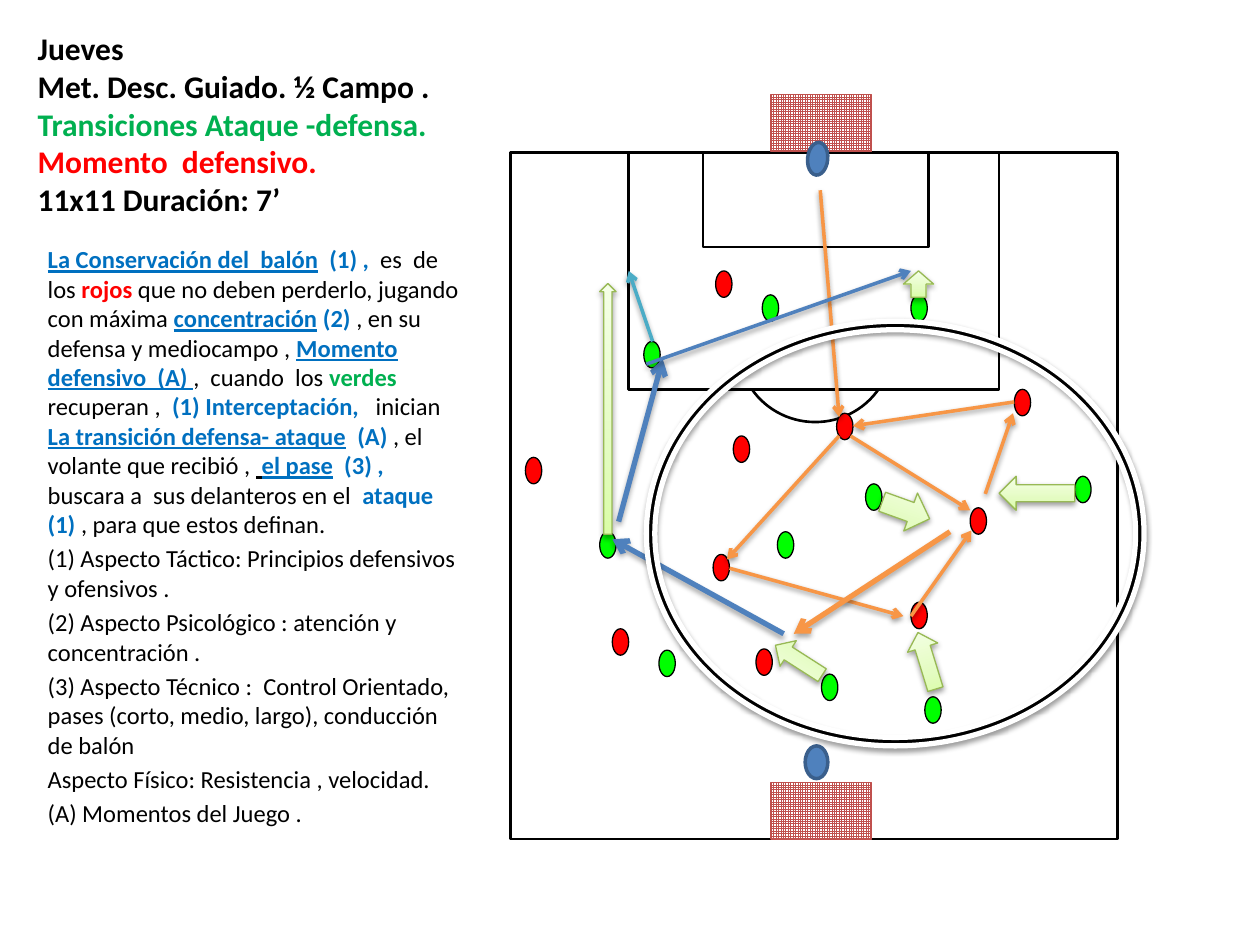
from copy import deepcopy
from pptx import Presentation
from pptx.dml.color import RGBColor
from pptx.enum.dml import MSO_PATTERN as Pat
from pptx.enum.shapes import MSO_CONNECTOR as Conn, MSO_SHAPE as Geo
from pptx.enum.text import MSO_ANCHOR as Anchor
from pptx.oxml import parse_xml
from pptx.oxml.ns import nsdecls, qn
from pptx.util import Inches, Pt

BLACK, WHITE, RED, GREEN = "000000", "FFFFFF", "FF0000", "00B050"
BLUE, LIME, STEEL, ORANGE, TEAL = "0070C0", "00FF00", "4F81BD", "F79646", "4BACC6"

# Text looks: colour, bold, underline
LOOKS = {
    "text": (BLACK, False, False), "line": (BLACK, False, True),
    "head": (BLACK, True, False), "link": (BLUE, True, True),
    "blue": (BLUE, True, False), "red": (RED, True, False),
    "green": (GREEN, True, False),
}

TITLE = [
    ("head", "Jueves "), ("head", "Met. Desc. Guiado. ½ Campo ."),
    ("green", "Transiciones Ataque -defensa. "),
    ("red", "Momento  defensivo."), ("head", "11x11 Duración: 7’"),
]
STORY = [
    ("link", "La Conservación del  balón"), ("blue", "  (1) ,  "),
    ("text", "es  de los "), ("red", "rojos"),
    ("text", " que no deben perderlo, jugando con máxima "),
    ("link", "concentración"), ("blue", " (2) "),
    ("text", ", en su defensa y mediocampo , "),
    ("link", "Momento defensivo  (A) "), ("text", ",  cuando  los "),
    ("green", "verdes"), ("text", " recuperan ,  "),
    ("blue", "(1) Interceptación,  "), ("text", " inician  "),
    ("link", "La transición defensa- ataque"), ("blue", "  (A) "),
    ("text", ", el  volante que recibió , "), ("line", " "),
    ("link", "el pase"), ("blue", "  (3) , "),
    ("text", "buscara a  sus delanteros en el  "),
    ("blue", "ataque  (1) "), ("text", ", para que estos definan."),
]
NOTES = [
    "(1) Aspecto Táctico: Principios defensivos y ofensivos .",
    "(2) Aspecto Psicológico : atención y concentración .",
    "(3) Aspecto Técnico :  Control Orientado, pases (corto, medio, largo), "
    "conducción de balón",
    "Aspecto Físico: Resistencia , velocidad.",
    "(A) Momentos del Juego .",
]

# Places on the board, in inches from its corner
GREENS = [(1.11, 2.71), (2.05, 2.34), (1.23, 5.16), (2.87, 3.84), (2.17, 4.22),
          (3.34, 5.53), (4.53, 3.78), (3.23, 2.34), (2.52, 5.35), (0.76, 4.22)]
REDS = [(1.68, 2.15), (1.82, 3.46), (1.66, 4.4), (4.05, 3.09), (0.17, 3.63),
        (3.23, 4.78), (0.86, 4.99), (2, 5.15), (2.64, 3.28), (3.7, 4.03)]
KEEPERS = [(2.41, 1.13, 0.16, 0.26, 5.4), (2.39, 5.92, 0.18, 0.26, 0)]
# Runs and passes: from, to, colour, width
PASSES = [
    (2.51, 1.51, 2.66, 3.31, ORANGE, 2), (2.75, 3.46, 3.7, 4.05, ORANGE, 2),
    (3.82, 3.92, 4.04, 3.28, ORANGE, 2), (4.05, 3.19, 2.77, 3.38, ORANGE, 2),
    (2.66, 3.46, 1.77, 4.44, ORANGE, 2), (1.79, 4.51, 3.17, 4.89, ORANGE, 2),
    (3.23, 4.89, 3.71, 4.21, ORANGE, 2), (3.54, 4.22, 2.3, 5.03, ORANGE, 3),
    (2.22, 5.03, 0.86, 4.28, STEEL, 3), (0.91, 4.14, 1.26, 2.85, STEEL, 3),
    (1.18, 2.71, 0.99, 2.15, TEAL, 2), (1.13, 2.89, 3.23, 2.15, STEEL, 2),
]
# Block arrows: shape, place and size, turn
BLOCKS = [
    (Geo.UP_ARROW, (3.23, 5.01, 0.25, 0.47), 342.9),
    (Geo.RIGHT_ARROW, (2.12, 5.12, 0.44, 0.24), 212.6),
    (Geo.LEFT_ARROW, (3.93, 3.78, 0.6, 0.27), 0),
    (Geo.RIGHT_ARROW, (2.99, 3.89, 0.4, 0.32), 19.8),
    (Geo.UP_ARROW, (0.76, 2.25, 0.13, 1.99), 0),
    (Geo.UP_ARROW, (3.17, 2.15, 0.24, 0.21), 0),
]
FADE = [(0, "DAFDA7"), (0.35, "E4FCC2"), (1, "F5FFE7")]


def rgb(code):
    return RGBColor.from_string(code)


def write(para, look, text):
    run = para.add_run()
    run.text = text
    color, run.font.bold, run.font.underline = LOOKS[look]
    run.font.color.rgb = rgb(color)


def frame(slide, box, anchor):
    text = slide.shapes.add_textbox(*map(Inches, box)).text_frame
    text.word_wrap = True
    text.vertical_anchor = anchor
    return text


def shade(shape, alpha=38, dist=20000):
    """Soft shadow straight below."""
    props = shape.element.spPr
    for old in props.findall(qn("a:effectLst")):
        props.remove(old)
    props.append(parse_xml(
        f'<a:effectLst {nsdecls("a")}><a:outerShdw blurRad="40000" dist="{dist}" '
        f'dir="5400000" rotWithShape="0"><a:srgbClr val="000000">'
        f'<a:alpha val="{alpha}000"/></a:srgbClr></a:outerShdw></a:effectLst>'))


def add(slide, board, geo, spot, fill, line=BLACK, width=0.75, turn=0):
    left, top, wide, high = spot
    shape = slide.shapes.add_shape(
        geo, *map(Inches, (board[0] + left, board[1] + top, wide, high)))
    shape.shadow.inherit = False
    shape.rotation = turn
    if fill:
        shape.fill.solid()
        shape.fill.fore_color.rgb = rgb(fill)
    shape.line.color.rgb = rgb(line)
    shape.line.width = Pt(width)
    return shape


def fade(shape):
    shape.fill.gradient()
    shape.fill.gradient_angle = 90
    stops = shape.element.spPr.find(".//" + qn("a:gsLst"))
    stops.append(deepcopy(stops[-1]))
    for stop, (place, color) in zip(shape.fill.gradient_stops, FADE):
        stop.position = place
        stop.color.rgb = rgb(color)


def arrow(slide, board, x1, y1, x2, y2, color, width):
    left, top = board
    line = slide.shapes.add_connector(Conn.STRAIGHT, *map(
        Inches, (left + x1, top + y1, left + x2, top + y2)))
    line.line.color.rgb = rgb(color)
    line.line.width = Pt(width)
    line.element.spPr.find(qn("a:ln")).append(
        parse_xml(f'<a:tailEnd {nsdecls("a")} type="arrow"/>'))
    shade(line, *((35, 23000) if width == 3 else ()))


def title(slide, box):
    para = frame(slide, box, Anchor.BOTTOM).paragraphs[0]
    para.font.size, para.font.name = Pt(18), "Calibri"
    for row, (look, text) in enumerate(TITLE):
        if row:
            para.add_line_break()
        write(para, look, text)


def body(slide, box):
    text = frame(slide, box, Anchor.TOP)
    for row, runs in enumerate([STORY] + [[("text", note)] for note in NOTES]):
        para = text.add_paragraph() if row else text.paragraphs[0]
        para.font.size, para.font.name = Pt(14), "Calibri"
        para.space_before = Pt(2.8)
        for look, words in runs:
            write(para, look, words)


def pitch(slide, board):
    # Field, penalty arc and areas
    add(slide, board, Geo.RECTANGLE, (0.05, 1.21, 4.82, 5.45), WHITE, width=1.5)
    arc = add(slide, board, Geo.OVAL, (1.86, 2.15, 1.22, 1.2), WHITE, width=1.5)
    arc.element.spPr.find(qn("a:solidFill"))[0].append(
        parse_xml(f'<a:alpha {nsdecls("a")} val="50000"/>'))
    for spot in [(0.99, 1.21, 2.94, 1.88), (1.58, 1.21, 1.79, 0.75)]:
        add(slide, board, Geo.RECTANGLE, spot, WHITE, width=1.5)
    # Players
    for team, color in [(GREENS, LIME), (REDS, RED)]:
        for x, y in team:
            add(slide, board, Geo.OVAL, (x, y, 0.13, 0.21), color)
    # Goals
    for y in (0.75, 6.21):
        net = add(slide, board, Geo.RECTANGLE, (2.12, y, 0.8, 0.45), None, "C0504D")
        net.fill.patterned()
        net.fill.pattern = Pat.SMALL_GRID
        net.fill.fore_color.rgb = rgb("C0504D")
        net.fill.back_color.rgb = rgb(WHITE)
    for *spot, turn in KEEPERS:
        add(slide, board, Geo.OVAL, spot, STEEL, "3A5F8C", 2, turn)


def moves(slide, board):
    for move in PASSES:
        arrow(slide, board, *move)
    for geo, spot, turn in BLOCKS:
        block = add(slide, board, geo, spot, None, "98B955", turn=turn)
        fade(block)
        shade(block)
    # Zone where the ball is kept
    ring = add(slide, board, Geo.DONUT, (1.13, 2.55, 3.95, 3.37), BLACK, WHITE, 3)
    ring.adjustments[0] = 0.02
    shade(ring)


def main():
    deck = Presentation()
    deck.slide_width, deck.slide_height = Inches(10), Inches(7.5)
    slide = deck.slides.add_slide(deck.slide_layouts[6])
    title(slide, (0.2, 0.13, 3.59, 1.65))
    body(slide, (0.28, 1.89, 3.51, 4.79))
    board = (4, 0)
    pitch(slide, board)
    moves(slide, board)
    deck.save("out.pptx")


if __name__ == "__main__":
    main()
